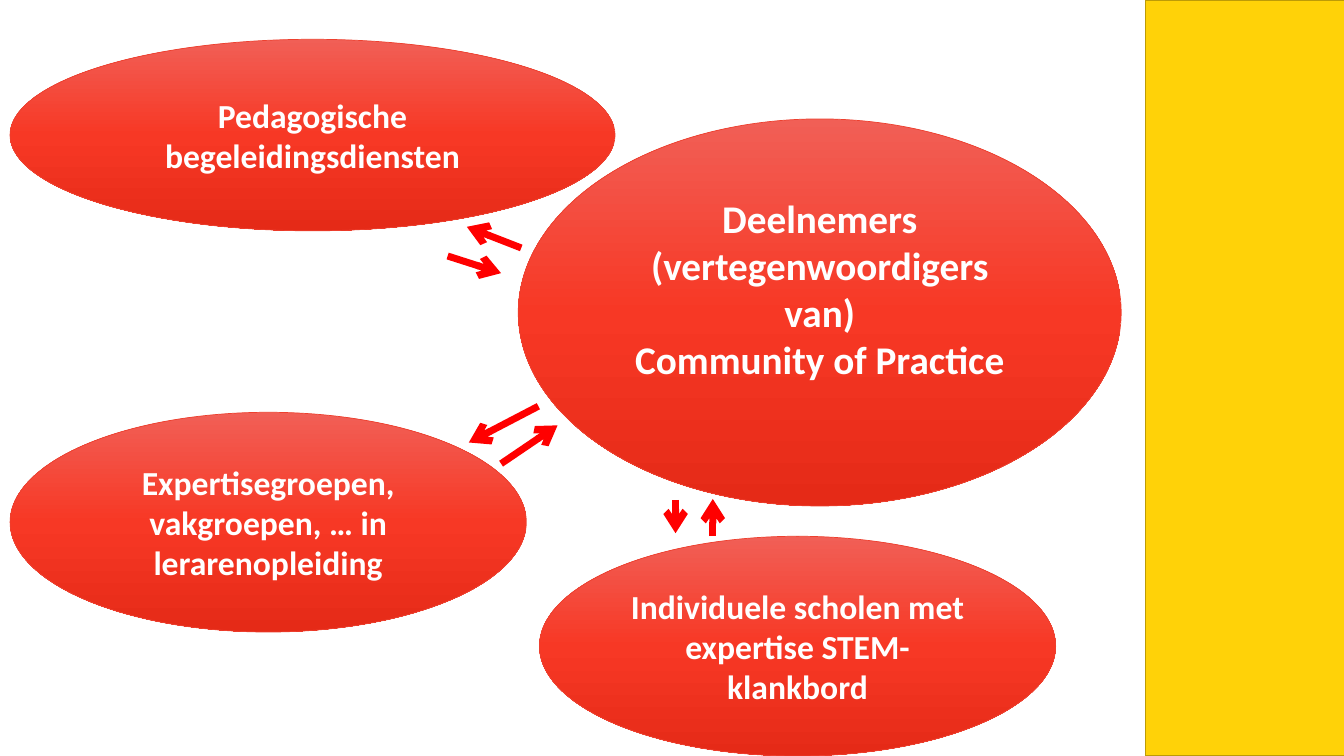
from copy import deepcopy

from pptx import Presentation
from pptx.dml import color
from pptx.enum import shapes, text
from pptx.oxml import ns
from pptx.util import Pt

PX = 9144
HUES = {"band": "FFD208", "edge": "BD9B06", "top": "F15F56", "mid": "F73825",
        "low": "E52A17", "rim": "ED402F", "arrow": "FF0000", "text": "FFFFFF"}
FONT = {"name": "Calibri", "bold": True}
FRAME = {"word_wrap": True, "vertical_anchor": text.MSO_ANCHOR.MIDDLE}
OVALS = [
    ((10, 39, 600, 190), 24, 5, ["Pedagogische begeleidingsdiensten"]),
    ((514, 118, 598, 384), 28, 52,
     ["Deelnemers (vertegenwoordigers van)", "Community of Practice"]),
    ((10, 409, 512, 218), 24, 5,
     ["Expertisegroepen, vakgroepen, … in lerarenopleiding"]),
    ((535, 532, 512, 218), 24, 5,
     ["Individuele scholen met expertise STEM- klankbord"]),
]
ARROWS = [(444, 254, 497, 271), (517, 246, 463, 225), (534, 403, 465, 439),
          (497, 460, 553, 422), (670, 496, 670, 529), (707, 532, 707, 495)]


def rgb(key):
    """Return the colour stored under a key."""
    return color.RGBColor.from_string(HUES[key])


def style(item, values):
    """Set each named attribute on an item."""
    for name, value in values.items():
        setattr(item, name, value)


def form(slide, kind, box, edge, width):
    """Add an outlined preset shape without a shadow."""
    shape = slide.shapes.add_shape(kind, *(n * PX for n in box))
    shape.shadow.inherit = False
    shape.line.color.rgb = rgb(edge)
    shape.line.width = Pt(width)
    return shape


def band(slide):
    """Draw the yellow band along the right side."""
    shape = form(slide, shapes.MSO_SHAPE.RECTANGLE, (1136, 0, 198, 750), "edge", 1)
    shape.fill.solid()
    shape.fill.fore_color.rgb = rgb("band")


def shade(shape):
    """Fill a shape with the three-step red gradient."""
    shape.fill.gradient()
    shape.fill.gradient_angle = 270
    stops = shape._element.spPr.find(".//" + ns.qn("a:gsLst"))
    stops.append(deepcopy(stops[0]))
    for step, (stop, key) in enumerate(zip(shape.fill.gradient_stops, ("top", "mid", "low"))):
        stop.color.rgb = rgb(key)
        stop.position = step / 2


def oval(slide, box, size, foot, lines):
    """Draw a red oval with centred bold text."""
    shape = form(slide, shapes.MSO_SHAPE.OVAL, box, "rim", 0.5)
    shade(shape)
    frame = shape.text_frame
    style(frame, FRAME | {"margin_bottom": foot * PX})
    frame.text = "\n".join(lines)
    for para in frame.paragraphs:
        para.alignment = text.PP_ALIGN.CENTER
        style(para.font, FONT | {"size": Pt(size)})
        para.font.color.rgb = rgb("text")


def arrow(slide, ends):
    """Draw a thick red arrow between two points."""
    link = slide.shapes.add_connector(shapes.MSO_CONNECTOR.STRAIGHT, *(n * PX for n in ends))
    link.line.color.rgb = rgb("arrow")
    link.line.width = Pt(5)
    tip = link.line._get_or_add_ln().makeelement(ns.qn("a:tailEnd"), {"type": "arrow"})
    link.line._get_or_add_ln().append(tip)
    props = link._element.spPr
    props.append(props.makeelement(ns.qn("a:effectLst"), {}))


def main():
    """Build and save the slide."""
    deck = Presentation()
    style(deck, {"slide_width": 1333 * PX, "slide_height": 750 * PX})
    slide = deck.slides.add_slide(deck.slide_layouts[6])
    band(slide)
    for item in OVALS:
        oval(slide, *item)
    for ends in ARROWS:
        arrow(slide, ends)
    deck.save("out.pptx")


if __name__ == "__main__":
    main()
